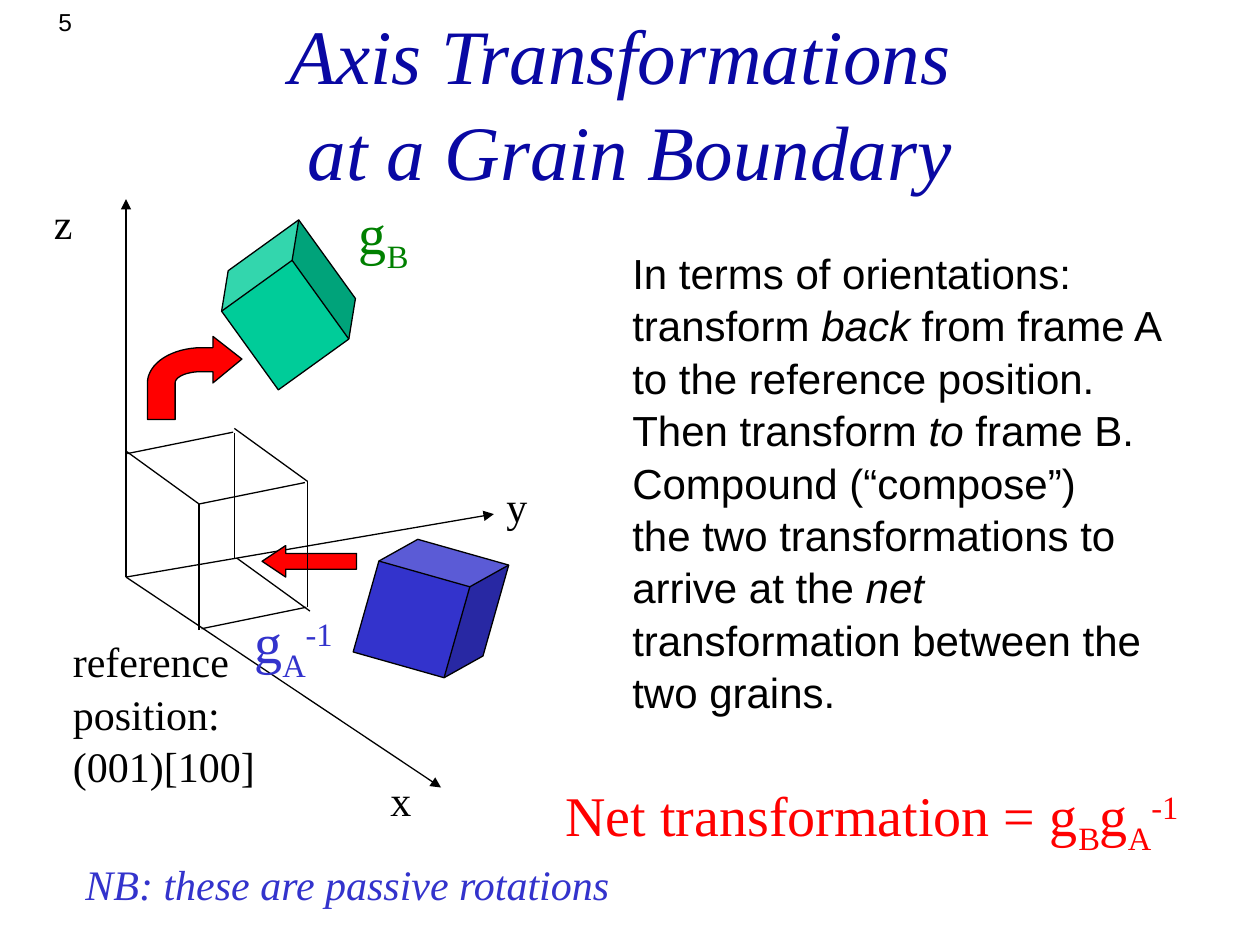
from math import cos, pi, sin

from lxml import etree
from pptx import Presentation
from pptx.dml.color import RGBColor
from pptx.enum.shapes import MSO_CONNECTOR, MSO_SHAPE
from pptx.enum.text import MSO_ANCHOR, MSO_AUTO_SIZE, PP_ALIGN
from pptx.oxml.ns import qn
from pptx.util import Inches, Pt

COLORS = {
    "black": "000000", "title": "0908A3", "grain_a": "3333CC",
    "grain_b": "00CC99", "label_b": "008000", "red": "FF0000",
}
SERIF, SANS = "Times New Roman", "Arial"
SUB, SUPER = -25, 30


def rgb(name):
    return RGBColor.from_string(COLORS[name])


def add_runs(paragraph, runs, size, color, font=SERIF):
    """Each run is (text, italic, baseline); a newline is a line break."""
    paragraph.line_spacing = 1.04
    for text, italic, baseline in runs:
        for index, line in enumerate(text.split("\n")):
            if index:
                paragraph.add_line_break()
            if not line:
                continue
            run = paragraph.add_run()
            run.text = line
            run.font.name, run.font.size = font, Pt(size)
            run.font.italic = italic
            run.font.color.rgb = rgb(color)
            if baseline:
                run.font._element.set("baseline", str(baseline * 1000))


def add_text(slide, box, paragraphs, size, color="black", font=SERIF,
             wrap=False, align=PP_ALIGN.LEFT):
    frame = slide.shapes.add_textbox(*map(Inches, box)).text_frame
    frame.word_wrap = wrap
    frame.auto_size = MSO_AUTO_SIZE.NONE
    for index, runs in enumerate(paragraphs):
        paragraph = frame.add_paragraph() if index else frame.paragraphs[0]
        paragraph.alignment = align
        add_runs(paragraph, runs, size, color, font)


def plain(text, italic=False):
    return [[(text, italic, 0)]]


def add_line(slide, start, end, arrow=False):
    line = slide.shapes.add_connector(
        MSO_CONNECTOR.STRAIGHT, *map(Inches, (*start, *end)))
    line.line.color.rgb = rgb("black")
    line.line.width = Pt(0.75)
    if arrow:
        etree.SubElement(line.line._get_or_add_ln(), qn("a:tailEnd"), type="triangle")
    etree.SubElement(line._element.spPr, qn("a:effectLst"))


def style_shape(shape, fill):
    shape.shadow.inherit = False
    shape.fill.solid()
    shape.fill.fore_color.rgb = rgb(fill)
    shape.line.color.rgb = rgb("black")
    shape.line.width = Pt(0.75)


def add_preset(slide, kind, box, fill, adjustments, rotation=0):
    shape = slide.shapes.add_shape(kind, *map(Inches, box))
    for index, value in enumerate(adjustments):
        shape.adjustments[index] = value
    shape.rotation = rotation
    style_shape(shape, fill)


def add_title(slide, box):
    title = slide.shapes.title
    title.left, title.top, title.width, title.height = map(Inches, box)
    frame = title.text_frame
    frame.word_wrap = True
    frame.auto_size = MSO_AUTO_SIZE.NONE
    frame.vertical_anchor = MSO_ANCHOR.MIDDLE
    frame.paragraphs[0].alignment = PP_ALIGN.CENTER
    add_runs(frame.paragraphs[0],
             [("Axis Transformations \nat a Grain Boundary", True, 0)], 44, "title")


def add_axes(slide, x, y):
    """Axes from the origin (x, y), each with its label."""
    axes = [("x", (2.5, 1.67), (2, 1.5)),
            ("z", (0, -3), (-0.67, -3.08)),
            ("y", (2.92, -0.5), (2.92, -0.83))]
    for name, (dx, dy), (label_x, label_y) in axes:
        add_line(slide, (x, y), (x + dx, y + dy), arrow=True)
        add_text(slide, (x + label_x, y + label_y, 0.37, 0.5), plain(name), 24)


def add_reference_cube(slide, x, y):
    """Wire cube whose hidden lower corner is the origin (x, y)."""
    edges = [
        # Uprights
        (0.58, 0.42, 0.58, -0.58), (0.86, -0.14, 0.86, -1.14),
        (1.44, 0.24, 1.44, -0.76),
        # Edges along y
        (0.6, 0.41, 1.43, 0.24), (0.01, -0.98, 0.85, -1.15),
        (0.58, -0.58, 1.42, -0.75),
        # Edges along x
        (0.88, -0.15, 1.46, 0.27), (0.86, -1.18, 1.44, -0.76),
        (0, -1, 0.58, -0.58),
    ]
    for x1, y1, x2, y2 in edges:
        add_line(slide, (x + x1, y + y1), (x + x2, y + y2))
    add_text(slide, (x - 0.52, y + 0.4, 1.65, 1.3),
             plain("reference\nposition:\n(001)[100]"), 24)


def add_bent_arrow(slide, x, y):
    """Arrow that rises, bends along two quarter ellipses and points right."""
    def bend(radius_x, radius_y, steps=16):
        angles = [pi / 2 * step / steps for step in range(steps + 1)]
        return [(0.43 - radius_x * sin(a), 0.37 - radius_y * cos(a)) for a in angles]

    outline = [(0.75, 0.18), (0.52, 0), (0.52, 0.09), *bend(0.43, 0.28),
               (0, 0.66), (0.22, 0.66), *reversed(bend(0.21, 0.09)),
               (0.52, 0.28), (0.52, 0.37)]
    points = [(Inches(x + px), Inches(y + py)) for px, py in outline]
    builder = slide.shapes.build_freeform(*points[0])
    builder.add_line_segments(points[1:], close=True)
    style_shape(builder.convert_to_shape(), "red")


def add_grains(slide, x, y):
    """Grains A and B and the rotations between them and the reference."""
    add_preset(slide, MSO_SHAPE.CUBE, (x + 0.83, y + 0.42, 0.92, 1),
               "grain_b", [0.25], 324.2)
    add_preset(slide, MSO_SHAPE.CUBE, (x + 1.92, y + 2.83, 1, 1),
               "grain_a", [0.25], 15.8)
    add_text(slide, (x + 0.92, y + 3.25, 0.88, 0.63),
             [[("g", False, 0), ("A", False, SUB), ("-1", False, SUPER)]], 32, "grain_a")
    add_text(slide, (x + 1.75, y, 0.62, 0.63),
             [[("g", False, 0), ("B", False, SUB)]], 32, "label_b")
    add_bent_arrow(slide, x + 0.17, y + 1.17)
    add_preset(slide, MSO_SHAPE.LEFT_ARROW, (x + 1.08, y + 2.83, 0.75, 0.25),
               "red", [0.5, 0.75])


def add_explanation(slide, box):
    add_text(slide, box, [
        [("In terms of orientations:", False, 0)],
        [("transform ", False, 0), ("back ", True, 0),
         ("from frame A\nto the reference position.\nThen transform ", False, 0),
         ("to", True, 0),
         (" frame B.\nCompound (“compose”)\n"
          "the two transformations to arrive at the ", False, 0),
         ("net ", True, 0),
         ("transformation between the two grains.", False, 0)],
    ], 24, font=SANS, wrap=True)


def add_conclusion(slide, box):
    add_text(slide, box, [[
        ("Net transformation = g", False, 0), ("B", False, SUB),
        ("g", False, 0), ("A", False, SUB), ("-1", False, SUPER)]], 32, "red")


def main():
    prs = Presentation()
    prs.slide_width, prs.slide_height = Inches(10), Inches(7.5)
    slide = prs.slides.add_slide(prs.slide_layouts[5])

    # Heading and slide number
    add_text(slide, (0, 0, 0.67, 0.33), plain("5"), 14, font=SANS,
             wrap=True, align=PP_ALIGN.RIGHT)
    add_title(slide, (0.75, 0.08, 8.5, 1.42))

    # Diagram
    add_axes(slide, 1, 4.58)
    add_grains(slide, 1, 1.5)
    add_reference_cube(slide, 1, 4.58)

    # Explanation, result and remark
    add_explanation(slide, (4.92, 1.9, 4.5, 3.76))
    add_conclusion(slide, (4.39, 6.12, 5.2, 0.64))
    add_text(slide, (0.58, 6.75, 4.39, 0.5),
             plain("NB: these are passive rotations", True), 24, "grain_a")

    prs.save("out.pptx")


if __name__ == "__main__":
    main()
